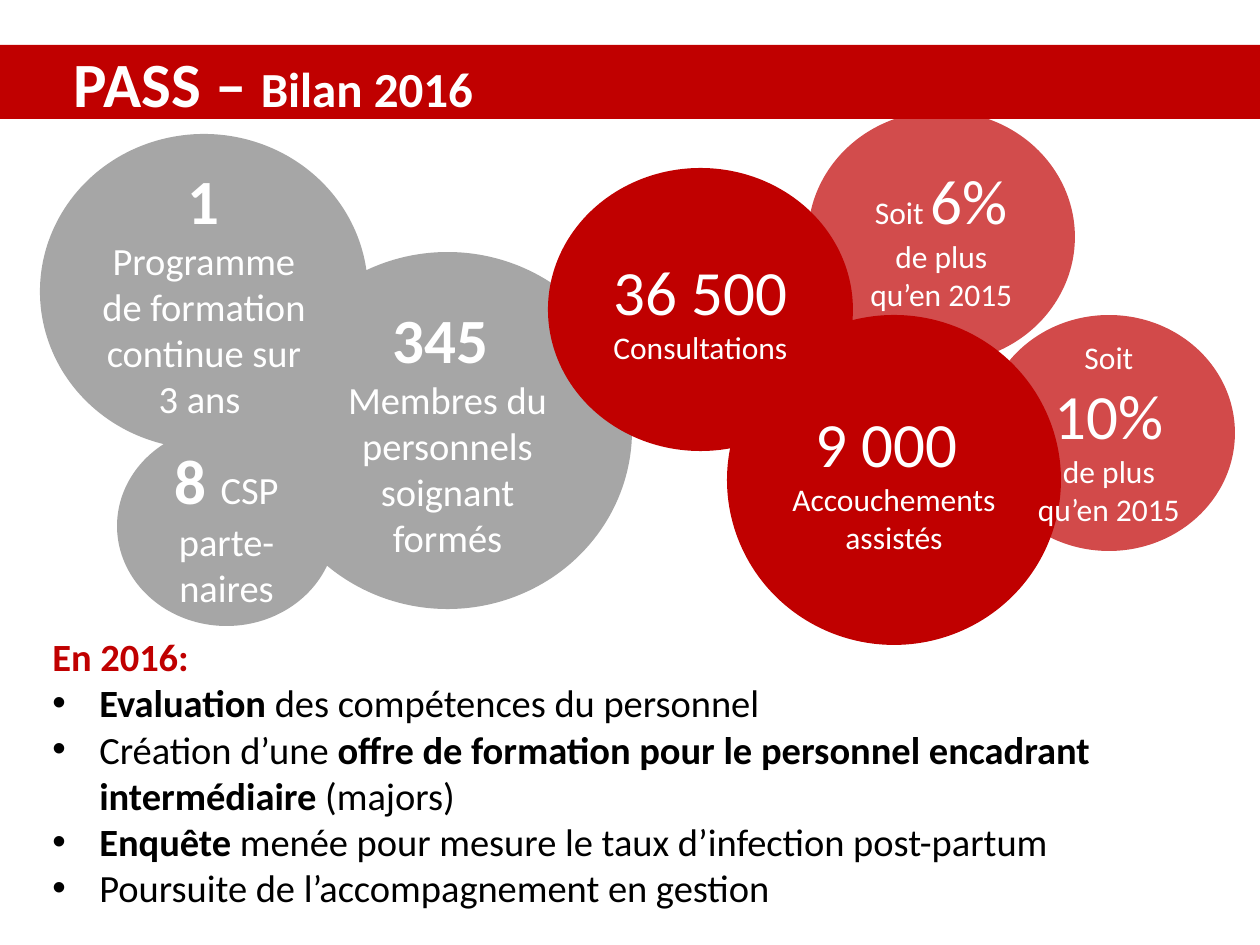
from lxml import etree
from pptx import Presentation
from pptx.dml.color import RGBColor
from pptx.enum.shapes import MSO_SHAPE
from pptx.enum.text import MSO_ANCHOR, MSO_AUTO_SIZE, PP_ALIGN
from pptx.oxml.ns import qn
from pptx.util import Pt

OVAL, RECTANGLE = MSO_SHAPE.OVAL, MSO_SHAPE.RECTANGLE
MIDDLE = MSO_ANCHOR.MIDDLE
GROW = MSO_AUTO_SIZE.SHAPE_TO_FIT_TEXT
CENTER, LEFT = PP_ALIGN.CENTER, PP_ALIGN.LEFT

RED = RGBColor(0xC0, 0x00, 0x00)
GREY = RGBColor(0xA6, 0xA6, 0xA6)
WHITE = RGBColor(0xFF, 0xFF, 0xFF)
BLACK = RGBColor(0x00, 0x00, 0x00)

FONT = "Calibri"
EMU_PER_PX = 914400 / 126
BULLET_INDENT = 47

TITLE_BOX = (0, 45, 1260, 74)
SUMMARY_BOX = (40, 627, 1220, 292)

BIRTHS = (
    (727, 315, 334, 330), RED, 100,
    [[("9 000 ", 36, False)], [("Accouchements assistés", 18, False)]],
)
BUBBLES = [
    ((263, 252, 369, 357), GREY, 100,
     [[("345 ", 36, True), (" ", 20, False),
       ("Membres du personnels soignant formés", 22, False)]]),
    ((548, 168, 305, 283), RED, 100,
     [[("36 500", 36, False)], [("Consultations", 18, False)]]),
    ((983, 315, 252, 236), RED, 71,
     [[("Soit ", 18, False), ("10% ", 36, False),
       ("de plus qu’en 2015", 18, False)]]),
    ((808, 111, 267, 252), RED, 70,
     [[("Soit ", 18, False), ("6% ", 36, False),
       ("de plus qu’en 2015", 18, False)]]),
]
TRAINING_BUBBLES = [
    ((40, 134, 328, 315), GREY, 100,
     [[("1 ", 36, True),
       ("Programme de formation continue sur 3 ans ", 22, False)]]),
    ((117, 426, 219, 200), GREY, 100,
     [[("8 ", 36, True), ("CSP parte-naires", 22, False)]]),
]
SUMMARY_ITEMS = [
    [("Evaluation ", 22, True), ("des compétences du personnel", 22, False)],
    [("Création d’une ", 22, False),
     ("offre de formation pour le personnel encadrant intermédiaire ", 22, True),
     ("(majors)", 22, False)],
    [("Enquête", 22, True),
     (" menée pour mesure le taux d’infection post-partum", 22, False)],
    [("Poursuite de l’accompagnement en gestion", 22, False)],
]


def px(length):
    return round(length * EMU_PER_PX)


def add_runs(paragraph, runs, color, alignment):
    paragraph.alignment = alignment
    for text, size, bold in runs:
        run = paragraph.add_run()
        run.text = text
        run.font.name = FONT
        run.font.size = Pt(size)
        run.font.bold = bold
        run.font.color.rgb = color


def add_filled_shape(slide, kind, box, color):
    shape = slide.shapes.add_shape(kind, *map(px, box))
    shape.shadow.inherit = False
    shape.fill.solid()
    shape.fill.fore_color.rgb = color
    shape.line.fill.background()
    shape.text_frame.word_wrap = True
    shape.text_frame.vertical_anchor = MIDDLE
    return shape


def add_title_band(slide, box):
    shape = add_filled_shape(slide, RECTANGLE, box, RED)
    shape.text_frame.margin_left = px(74)
    runs = [("PASS – ", 36, True), ("Bilan 2016", 28, True)]
    add_runs(shape.text_frame.paragraphs[0], runs, WHITE, LEFT)


def add_bubble(slide, box, color, opacity, paragraphs):
    shape = add_filled_shape(slide, OVAL, box, color)
    if opacity < 100:
        color_element = shape.fill._xPr.find(".//" + qn("a:srgbClr"))
        etree.SubElement(color_element, qn("a:alpha"), val=str(opacity * 1000))
    frame = shape.text_frame
    for index, runs in enumerate(paragraphs):
        paragraph = frame.add_paragraph() if index else frame.paragraphs[0]
        add_runs(paragraph, runs, WHITE, CENTER)


def add_bullet(paragraph):
    properties = paragraph._p.get_or_add_pPr()
    properties.set("marL", str(px(BULLET_INDENT)))
    properties.set("indent", str(-px(BULLET_INDENT)))
    etree.SubElement(properties, qn("a:buFont"), typeface="Arial")
    etree.SubElement(properties, qn("a:buChar"), char="•")


def add_summary(slide, box):
    frame = slide.shapes.add_textbox(*map(px, box)).text_frame
    frame.word_wrap = True
    frame.auto_size = GROW
    add_runs(frame.paragraphs[0], [("En 2016:", 22, True)], RED, LEFT)
    for runs in SUMMARY_ITEMS:
        paragraph = frame.add_paragraph()
        add_runs(paragraph, runs, BLACK, LEFT)
        add_bullet(paragraph)


def main():
    presentation = Presentation()
    presentation.slide_width = px(1260)
    presentation.slide_height = px(945)
    slide = presentation.slides.add_slide(presentation.slide_layouts[6])
    add_bubble(slide, *BIRTHS)
    add_title_band(slide, TITLE_BOX)
    for bubble in BUBBLES:
        add_bubble(slide, *bubble)
    add_summary(slide, SUMMARY_BOX)
    for bubble in TRAINING_BUBBLES:
        add_bubble(slide, *bubble)
    presentation.save("out.pptx")


if __name__ == "__main__":
    main()
